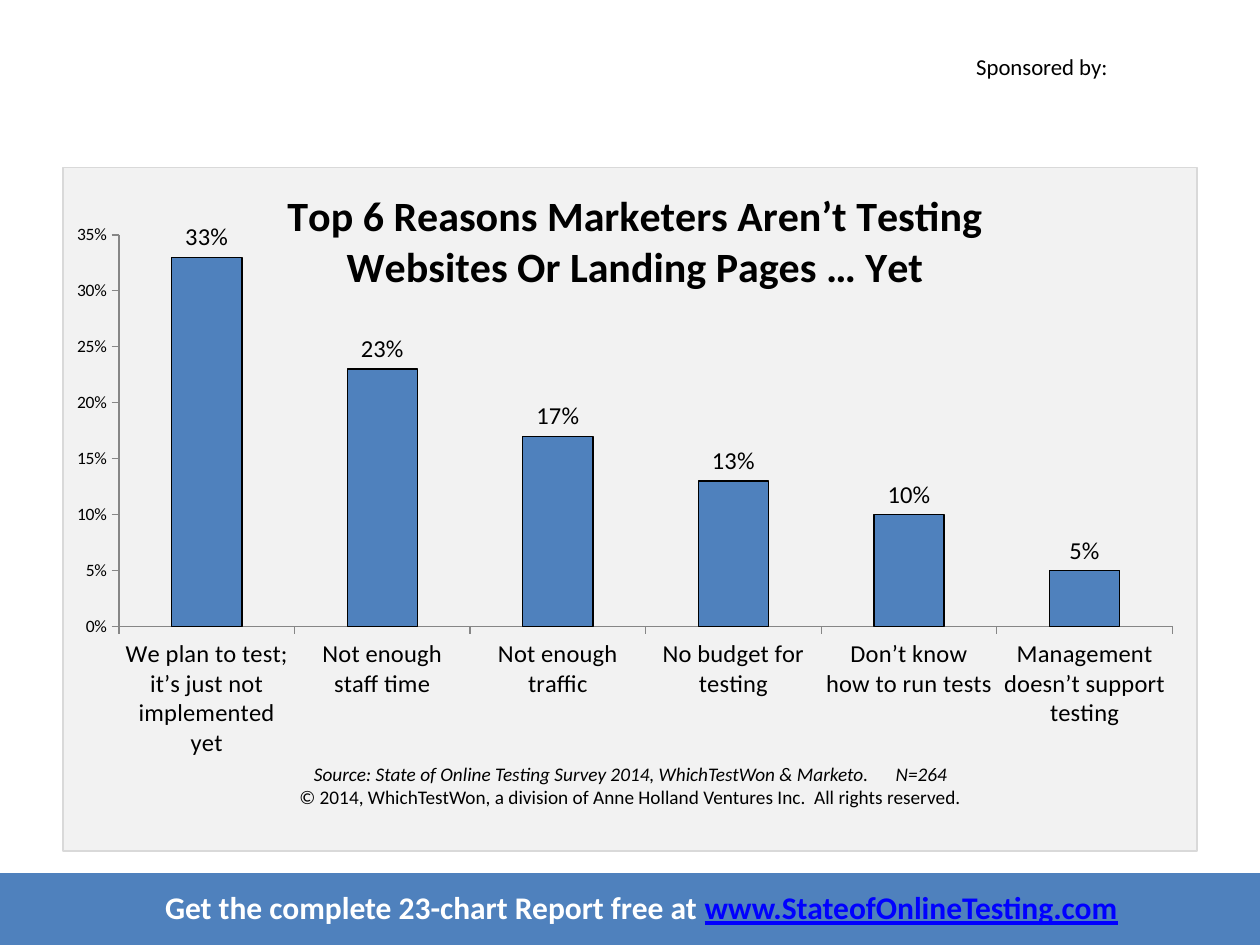
import pptx
import pptx.chart.data
import pptx.dml.color
import pptx.enum.chart
import pptx.enum.shapes
import pptx.enum.text
import pptx.oxml
import pptx.oxml.ns
import pptx.util
from pptx.util import Cm, Pt

REASONS = {
    "We plan to test; it’s just not implemented yet": 0.33,
    "Not enough staff time": 0.23,
    "Not enough traffic": 0.17,
    "No budget for testing": 0.13,
    "Don’t know how to run tests": 0.10,
    "Management doesn’t support testing": 0.05,
}
PLOT_AREA = {"x": 0.045, "y": 0.115, "w": 0.929, "h": 0.669}
BLUE, BLACK, WHITE, GREY = "4F81BD", "000000", "FFFFFF", "868686"


def colour(value):
    return pptx.dml.color.RGBColor.from_string(value)


def set_all(target, values):
    for name, value in values.items():
        setattr(target, name, value)


class SlideBuilder:
    """Holds the text style and the slide being filled."""

    font_name = "Calibri"

    def __init__(self, page):
        self.page = page

    def style(self, font, size, shade=BLACK, **values):
        set_all(font, {"name": self.font_name, "size": Pt(size), **values})
        font.color.rgb = colour(shade)

    def outline(self, line, shade, width):
        line.color.rgb = colour(shade)
        line.width = Pt(width)

    def panel(self, left, top, width, height, fill, border=None):
        shape = self.page.shapes.add_shape(
            pptx.enum.shapes.MSO_SHAPE.RECTANGLE,
            Cm(left), Cm(top), Cm(width), Cm(height))
        shape.shadow.inherit = False
        shape.fill.solid()
        shape.fill.fore_color.rgb = colour(fill)
        if border:
            self.outline(shape.line, border, 1)
        else:
            shape.line.fill.background()

    def text(self, left, top, width, height, size, lines, align="LEFT"):
        """Each line is a list of (wording, font values) spans."""
        box = self.page.shapes.add_textbox(
            Cm(left), Cm(top), Cm(width), Cm(height))
        frame = box.text_frame
        frame.word_wrap = True
        for index, spans in enumerate(lines):
            para = frame.add_paragraph() if index else frame.paragraphs[0]
            para.alignment = getattr(pptx.enum.text.PP_ALIGN, align)
            for wording, values in spans:
                values = dict(values)
                gap = values.pop("gap", None)
                span = para.add_run()
                span.text = wording
                self.style(span.font, size, **values)
                if gap:
                    span.font._element.set("spc", str(round(gap * 100)))

    def column_chart(self, left, top, width, height, title_lines, values):
        data = pptx.chart.data.CategoryChartData(number_format="0%")
        data.categories = list(values)
        data.add_series("Series 1", list(values.values()))
        chart = self.page.shapes.add_chart(
            pptx.enum.chart.XL_CHART_TYPE.COLUMN_CLUSTERED,
            Cm(left), Cm(top), Cm(width), Cm(height), data).chart
        self.style(chart.font, 10)
        chart.has_legend = False
        self.chart_title(chart, title_lines)
        self.axes(chart)
        self.columns(chart.plots[0])
        self.place_plot(chart)

    def chart_title(self, chart, lines):
        chart.has_title = True
        frame = chart.chart_title.text_frame
        frame.text = "\n".join(lines)
        for para in frame.paragraphs:
            for span in para.runs:
                self.style(span.font, 24, bold=True)

    def axes(self, chart):
        marks = pptx.enum.chart.XL_TICK_MARK
        for axis, size in ((chart.category_axis, 14), (chart.value_axis, 10)):
            set_all(axis, {"has_major_gridlines": False,
                           "major_tick_mark": marks.OUTSIDE,
                           "minor_tick_mark": marks.NONE})
            self.style(axis.tick_labels.font, size)
            self.outline(axis.format.line, GREY, 0.75)
        set_all(chart.value_axis, {"minimum_scale": 0, "maximum_scale": 0.35,
                                   "major_unit": 0.05})
        set_all(chart.value_axis.tick_labels,
                {"number_format": "0%", "number_format_is_linked": False})

    def columns(self, plot):
        set_all(plot, {"gap_width": 150, "vary_by_categories": False,
                       "has_data_labels": True})
        series = plot.series[0]
        series.format.fill.solid()
        series.format.fill.fore_color.rgb = colour(BLUE)
        self.outline(series.format.line, BLACK, 0.75)
        labels = plot.data_labels
        set_all(labels, {
            "show_value": True, "number_format": "0%",
            "number_format_is_linked": False,
            "position": pptx.enum.chart.XL_LABEL_POSITION.OUTSIDE_END})
        self.style(labels.font, 14)

    def place_plot(self, chart):
        """Fix the inner plot area as fractions of the chart."""
        area = chart._chartSpace.xpath("c:chart/c:plotArea")[0]
        for old in area.xpath("c:layout"):
            area.remove(old)
        modes = "".join(f'<c:{name}Mode val="edge"/>' for name in "xy")
        sizes = "".join(f'<c:{name} val="{value}"/>'
                        for name, value in PLOT_AREA.items())
        area.insert(0, pptx.oxml.parse_xml(
            f'<c:layout {pptx.oxml.ns.nsdecls("c")}><c:manualLayout>'
            f'<c:layoutTarget val="inner"/>{modes}{sizes}'
            '</c:manualLayout></c:layout>'))


def main():
    deck = pptx.Presentation()
    deck.slide_width, deck.slide_height = Cm(25.4), Cm(19.05)
    builder = SlideBuilder(deck.slides.add_slide(deck.slide_layouts[6]))

    builder.panel(1.27, 3.38, 22.86, 13.77, "F2F2F2", "D9D9D9")
    builder.panel(0, 17.6, 25.4, 1.45, BLUE)
    builder.text(19.43, 0.94, 3.94, 0.81, 13, [[("Sponsored by:", {})]])
    builder.text(1.6, 17.78, 22.66, 1.02, 18, [[
        ("Get the complete 23-chart Report free at ",
         {"shade": WHITE, "bold": True}),
        ("www.StateofOnlineTesting.com",
         {"shade": "0000FF", "bold": True, "underline": True}),
    ]], "CENTER")
    builder.column_chart(
        1.37, 3.38, 22.86, 11.91,
        ["Top 6 Reasons Marketers Aren’t Testing",
         "Websites Or Landing Pages … Yet"], REASONS)
    builder.text(1.32, 15.24, 22.78, 1.02, 11, [
        [("Source: State of Online Testing Survey 2014, "
          "WhichTestWon & Marketo.", {"italic": True}),
         (" ", {"italic": True, "gap": 12.5}),
         ("N=264", {"italic": True})],
        [("© 2014, WhichTestWon, a division of Anne Holland Ventures Inc.  "
          "All rights reserved.", {})],
    ], "CENTER")
    deck.save("out.pptx")


if __name__ == "__main__":
    main()
